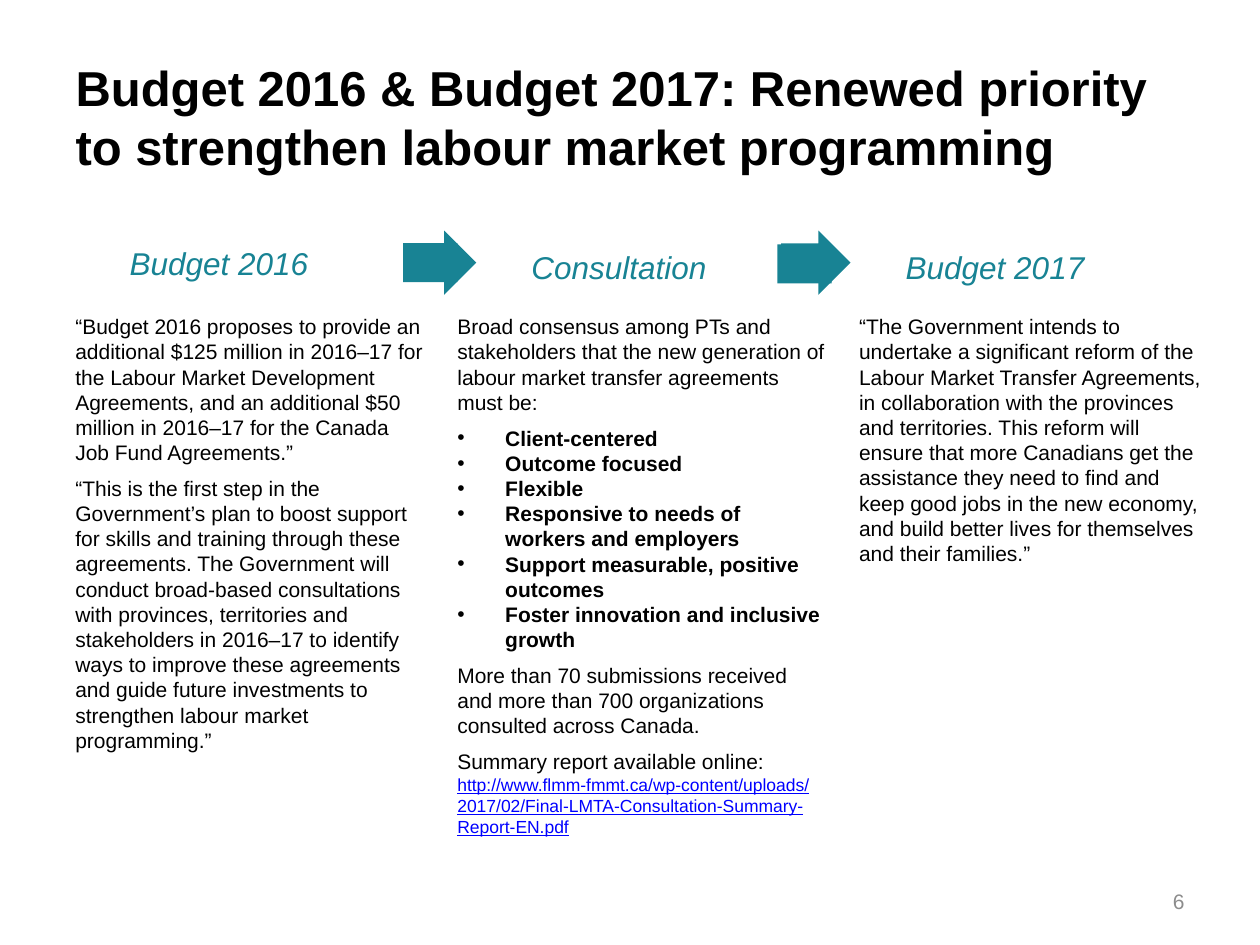
import pptx
import pptx.util
import pptx.dml.color
import pptx.enum.shapes
import pptx.enum.text
import pptx.oxml.ns
import lxml.etree

Inches = pptx.util.Inches
Pt = pptx.util.Pt
ALIGN = pptx.enum.text.PP_ALIGN
ANCHOR = pptx.enum.text.MSO_ANCHOR
AUTO_SIZE = pptx.enum.text.MSO_AUTO_SIZE
SHAPES = pptx.enum.shapes.MSO_SHAPE

COLORS = {"teal": "188394", "text": "000000", "number": "8C8C8C", "link": "0000FF"}
BODY_TOP = 2.44
BULLET_INDENT = 0.38

TITLE = "Budget 2016 & Budget 2017: Renewed priority to strengthen labour market programming"

BUDGET_2016 = [
    "“Budget 2016 proposes to provide an additional $125 million in 2016–17 for the "
    "Labour Market Development Agreements, and an additional $50 million in 2016–17 "
    "for the Canada Job Fund Agreements.”",
    "“This is the first step in the Government’s plan to boost support for skills and "
    "training through these agreements. The Government will conduct broad-based "
    "consultations with provinces, territories and stakeholders in 2016–17 to identify "
    "ways to improve these agreements and guide future investments to strengthen "
    "labour market programming.”",
]
BUDGET_2017 = [
    "“The Government intends to undertake a significant reform of the Labour Market "
    "Transfer Agreements, in collaboration with the provinces and territories. This "
    "reform will ensure that more Canadians get the assistance they need to find and "
    "keep good jobs in the new economy, and build better lives for themselves and "
    "their families.”",
]
CONSENSUS = (
    "Broad consensus among PTs and stakeholders that the new generation of labour "
    "market transfer agreements must be:"
)
PRIORITIES = [
    "Client-centered",
    "Outcome focused",
    "Flexible",
    "Responsive to needs of workers and employers",
    "Support measurable, positive outcomes",
    "Foster innovation and inclusive growth",
]
SUBMISSIONS = (
    "More than 70 submissions received and more than 700 organizations consulted "
    "across Canada."
)
REPORT_LABEL = "Summary report available online:"
REPORT_URL = (
    "http://www.flmm-fmmt.ca/wp-content/uploads/2017/02/"
    "Final-LMTA-Consultation-Summary-Report-EN.pdf"
)


def rgb(name):
    return pptx.dml.color.RGBColor.from_string(COLORS[name])


def place(shape, left, top, width, height):
    shape.left, shape.top = Inches(left), Inches(top)
    shape.width, shape.height = Inches(width), Inches(height)


def style_runs(paragraph, size=12, color="text", bold=False, italic=False, underline=False):
    for run in paragraph.runs:
        font = run.font
        font.name, font.size = "Arial", Pt(size)
        font.bold, font.italic, font.underline = bold, italic, underline
        font.color.rgb = rgb(color)


def set_bullet(paragraph, bulleted):
    """Give the paragraph a hanging bullet, or clear the inherited one."""
    indent = Inches(BULLET_INDENT) if bulleted else 0
    properties = paragraph._p.get_or_add_pPr()
    properties.set("marL", str(indent))
    properties.set("indent", str(-indent))
    tag = "a:buChar" if bulleted else "a:buNone"
    bullet = lxml.etree.SubElement(properties, pptx.oxml.ns.qn(tag))
    if bulleted:
        bullet.set("char", "•")


def add_text(slide, box, paragraphs, wrap=True, **style):
    textbox = slide.shapes.add_textbox(*map(Inches, box))
    frame = textbox.text_frame
    frame.word_wrap = wrap
    frame.auto_size = AUTO_SIZE.SHAPE_TO_FIT_TEXT
    frame.text = "\n".join(paragraphs)
    for paragraph in frame.paragraphs:
        style_runs(paragraph, **style)
    for paragraph in frame.paragraphs[:-1]:
        paragraph.space_after = Pt(6)
    return frame


def add_heading(slide, box, text, wrap=True):
    add_text(slide, box, [text], wrap, size=18, color="teal", italic=True)


def add_arrow(slide, left, shaft_top):
    """Group a block arrow with the rectangle that lengthens its shaft."""
    group = slide.shapes.add_group_shape()
    parts = [
        (SHAPES.RIGHT_ARROW, (left + 0.03, 1.83, 0.55, 0.51)),
        (SHAPES.RECTANGLE, (left, shaft_top, 0.43, 0.31)),
    ]
    for kind, box in parts:
        part = group.shapes.add_shape(kind, *map(Inches, box))
        part.shadow.inherit = False
        part.fill.solid()
        part.fill.fore_color.rgb = rgb("teal")
        part.line.fill.background()
        if kind == SHAPES.RIGHT_ARROW:
            part.adjustments[0], part.adjustments[1] = 0.6, 0.5


def fill_title(title):
    place(title, 0.5, 0.3, 9, 1.25)
    frame = title.text_frame
    frame.text = TITLE
    frame.auto_size = AUTO_SIZE.NONE
    frame.vertical_anchor = ANCHOR.MIDDLE
    frame.paragraphs[0].alignment = ALIGN.LEFT
    style_runs(frame.paragraphs[0], size=28, bold=True)


def fill_consultation(body):
    place(body, 3.53, BODY_TOP, 3.13, 4.59)
    frame = body.text_frame
    frame.word_wrap = True
    frame.auto_size = AUTO_SIZE.SHAPE_TO_FIT_TEXT
    frame.text = "\n".join([CONSENSUS, *PRIORITIES, SUBMISSIONS, REPORT_LABEL, REPORT_URL])
    block_ends = (CONSENSUS, PRIORITIES[-1], SUBMISSIONS)
    for paragraph in frame.paragraphs:
        bulleted = paragraph.text in PRIORITIES
        paragraph.space_before = Pt(0)
        paragraph.space_after = Pt(6 if paragraph.text in block_ends else 0)
        set_bullet(paragraph, bulleted)
        style_runs(paragraph, bold=bulleted)
    style_runs(frame.paragraphs[-1], size=10, color="link", underline=True)


def main():
    deck = pptx.Presentation()
    deck.slide_width, deck.slide_height = Inches(10), Inches(7.5)
    slide = deck.slides.add_slide(deck.slide_layouts[1])

    # Title and the consultation column
    fill_title(slide.shapes.title)
    fill_consultation(slide.placeholders[1])

    # Stage headings with arrows between them
    add_heading(slide, (0.93, 1.89, 2.77, 0.4), "Budget 2016")
    add_heading(slide, (4.12, 1.92, 2.4, 0.4), "Consultation")
    add_heading(slide, (7.09, 1.92, 1.63, 0.4), "Budget 2017", wrap=False)
    add_arrow(slide, 3.2, 1.93)
    add_arrow(slide, 6.17, 1.94)

    # Budget quotations
    add_text(slide, (0.5, BODY_TOP, 2.97, 3.62), BUDGET_2016)
    add_text(slide, (6.72, BODY_TOP, 2.93, 2.32), BUDGET_2017)

    # Slide number
    number = add_text(slide, (7.17, 6.95, 2.33, 0.4), ["6"], color="number")
    number.auto_size = AUTO_SIZE.NONE
    number.vertical_anchor = ANCHOR.MIDDLE
    number.paragraphs[0].alignment = ALIGN.RIGHT

    deck.save("out.pptx")


if __name__ == "__main__":
    main()
